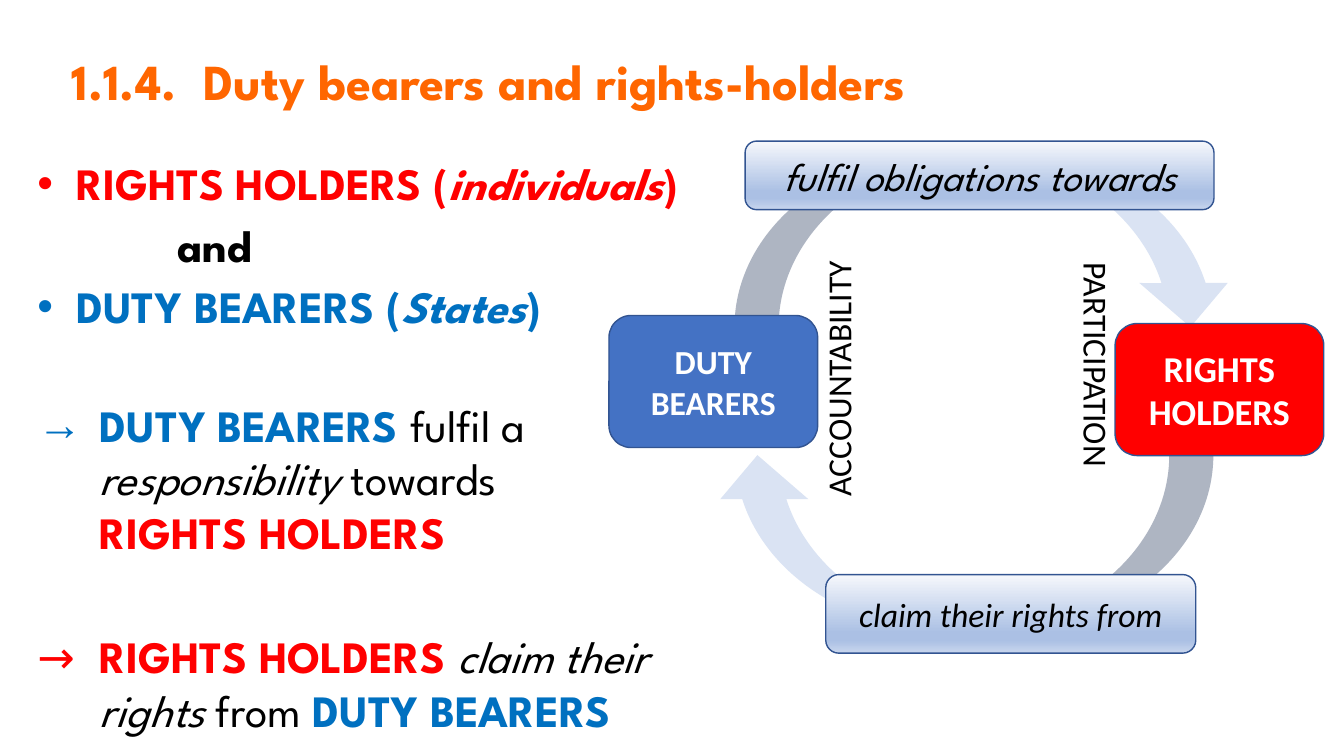
from copy import deepcopy

from lxml.etree import SubElement
from pptx import Presentation
from pptx.dml.color import RGBColor
from pptx.enum.shapes import MSO_SHAPE as Shape
from pptx.enum.text import MSO_ANCHOR as Anchor, MSO_AUTO_SIZE as AutoSize, PP_ALIGN as Align
from pptx.oxml.ns import qn
from pptx.util import Inches, Pt

RED, BLUE, BLACK, ORANGE = "FF0000", "0070C0", "000000", "FF6600"
WHITE, OUTLINE, PALE, DUTY_FILL = "FFFFFF", "325491", "DAE3F3", "4472C4"
GRADIENT = [(0, "F6F8FC"), (0.74, "ABC0E4"), (0.83, "ABC0E4"), (1, "C7D5ED")]
HEADING_FONT, LABEL_FONT = "League Spartan", "Calibri"

TITLE = "1.1.4.  Duty bearers and rights-holders"

# bullet, left margin, hanging indent, space before, runs of (text, colour, style)
BODY = [
    ("•", 0.39, 0.39, 0, [("RIGHTS HOLDERS (", RED, "b"), ("individuals", RED, "bi"), (")", RED, "b")]),
    (None, 1.39, 0, 0, [("and", BLACK, "b")]),
    ("•", 0.39, 0.39, 0, [("DUTY BEARERS (", BLUE, "b"), ("States", BLUE, "bi"), (")", BLUE, "b")]),
    ("→", 0.62, 0.62, 41, [("DUTY BEARERS ", BLUE, "b"), ("fulfil a\n", BLACK, ""),
                           ("responsibility", BLACK, "i"), (" towards \n", BLACK, ""),
                           ("RIGHTS HOLDERS", RED, "b")]),
    (None, 0.62, 0.62, 45, [("→\t", RED, ""), ("RIGHTS HOLDERS ", RED, "b"),
                            ("claim their\nrights ", BLACK, "i"), ("from ", BLACK, ""),
                            ("DUTY BEARERS", BLUE, "b")]),
]

SIDE_LABELS = [
    ("PARTICIPATION", (10.59, 2.51, 0.58, 2.59), "eaVert", Align.LEFT),
    ("ACCOUNTABILITY", (8.02, 2.46, 0.58, 2.59), "vert270", Align.CENTER),
]
ARROWS = [((8.89, -0.11, 1.75, 4.96), "flipV"), ((8.68, 2.91, 1.75, 4.96), "flipH")]
PARTIES = [
    ("RIGHTS HOLDERS", (11.06, 3.21, 2.07, 1.31), RED, 26),
    ("DUTY BEARERS", (6.04, 3.13, 2.07, 1.31), DUTY_FILL, 24),
]
ACTIONS = [
    ("fulfil obligations towards", (7.39, 1.4, 4.65, 0.68), HEADING_FONT, 28),
    ("claim their rights from", (8.19, 5.7, 3.67, 0.78), LABEL_FONT, 24),
]


def color(value):
    return RGBColor.from_string(value)


def place(shape, box):
    shape.left, shape.top, shape.width, shape.height = map(Inches, box)


def style_font(font, name, size, value, style=""):
    font.name, font.size = name, Pt(size)
    font.color.rgb = color(value)
    font.bold, font.italic = "b" in style, "i" in style


def set_bullet(paragraph, bullet, margin, hanging):
    properties = paragraph._p.get_or_add_pPr()
    properties.set("marL", str(Inches(margin)))
    properties.set("indent", str(-Inches(hanging)))
    if bullet:
        SubElement(properties, qn("a:buFont"), typeface="Arial")
        SubElement(properties, qn("a:buChar"), char=bullet)
    else:
        SubElement(properties, qn("a:buNone"))


def add_block(slide, kind, box, fill=None, outline=None):
    shape = slide.shapes.add_shape(kind, *map(Inches, box))
    shape.shadow.inherit = False
    if fill:
        shape.fill.solid()
        shape.fill.fore_color.rgb = color(fill)
    else:
        fill_gradient(shape)
    if outline:
        shape.line.color.rgb = color(outline)
        shape.line.width = Pt(1)
    else:
        shape.line.fill.background()
    return shape


def fill_gradient(shape):
    shape.fill.gradient()
    shape.fill.gradient_angle = 270
    stops = shape._element.spPr.find(".//" + qn("a:gsLst"))
    while len(stops) < len(GRADIENT):
        stops.append(deepcopy(stops[0]))
    for stop, (position, value) in zip(shape.fill.gradient_stops, GRADIENT):
        stop.position = position
        stop.color.rgb = color(value)


def write_label(shape, text, font, size, value, style="", align=Align.CENTER):
    frame = shape.text_frame
    frame.word_wrap = True
    frame.vertical_anchor = Anchor.MIDDLE
    paragraph = frame.paragraphs[0]
    paragraph.text = text
    paragraph.alignment = align
    style_font(paragraph.font, font, size, value, style)


def write_title(slide):
    title = slide.shapes.title
    place(title, (0.61, 0.43, 10.95, 0.81))
    write_label(title, TITLE, HEADING_FONT, 36, ORANGE, "b", Align.LEFT)
    title.text_frame.auto_size = AutoSize.NONE
    title.text_frame.paragraphs[0].line_spacing = 0.9


def write_body(slide):
    body = slide.placeholders[1]
    place(body, (0.27, 0.73, 8.88, 6.38))
    frame = body.text_frame
    frame.auto_size = AutoSize.NONE
    frame.margin_top = Inches(0.82)
    for index, (bullet, margin, hanging, before, runs) in enumerate(BODY):
        paragraph = frame.add_paragraph() if index else frame.paragraphs[0]
        paragraph.line_spacing = Pt(38)
        paragraph.space_before, paragraph.space_after = Pt(before), Pt(6)
        set_bullet(paragraph, bullet, margin, hanging)
        for text, value, style in runs:
            for number, piece in enumerate(text.split("\n")):
                if number:
                    paragraph.add_line_break()
                if piece:
                    run = paragraph.add_run()
                    run.text = piece
                    style_font(run.font, HEADING_FONT, 32, value, style)


def draw_cycle(slide):
    for text, box, direction, align in SIDE_LABELS:
        label = add_block(slide, Shape.RECTANGLE, box, WHITE)
        write_label(label, text, LABEL_FONT, 24, BLACK, align=align)
        frame = label.text_frame
        frame.margin_left = frame.margin_right = frame.margin_top = frame.margin_bottom = Inches(0.05)
        frame._txBody.bodyPr.set("vert", direction)
    for box, flip in ARROWS:
        arrow = add_block(slide, Shape.CURVED_RIGHT_ARROW, box, PALE)
        arrow.rotation = 90
        arrow._element.spPr.xfrm.set(flip, "1")
    for text, box, fill, size in PARTIES:
        party = add_block(slide, Shape.ROUNDED_RECTANGLE, box, fill, OUTLINE)
        write_label(party, text, LABEL_FONT, size, WHITE, "b")
    for text, box, font, size in ACTIONS:
        action = add_block(slide, Shape.ROUNDED_RECTANGLE, box, outline=OUTLINE)
        write_label(action, text, font, size, BLACK, "i")


def main():
    presentation = Presentation()
    presentation.slide_width, presentation.slide_height = Inches(13.33), Inches(7.5)
    slide = presentation.slides.add_slide(presentation.slide_layouts[1])
    write_title(slide)
    write_body(slide)
    draw_cycle(slide)
    presentation.save("out.pptx")


if __name__ == "__main__":
    main()
